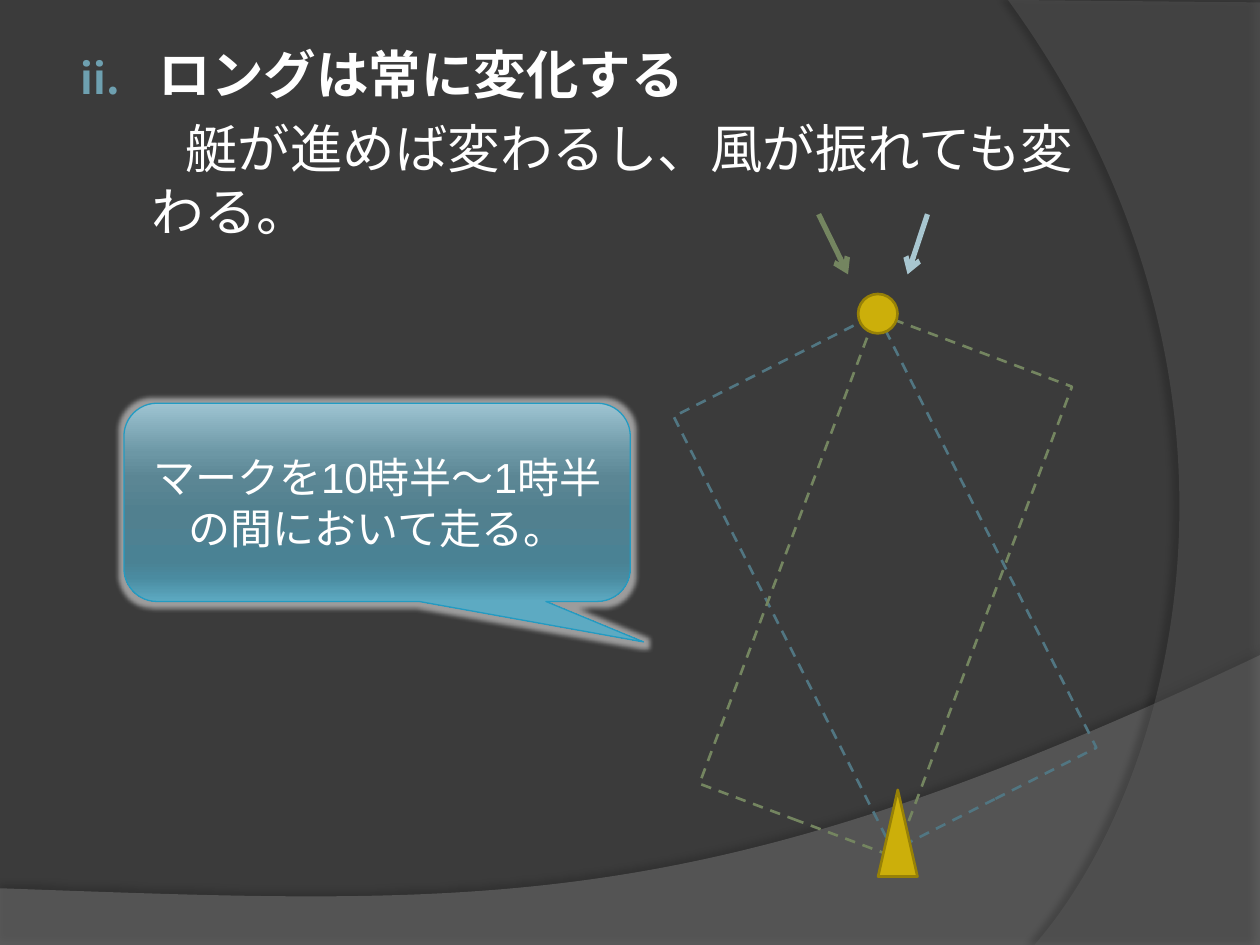
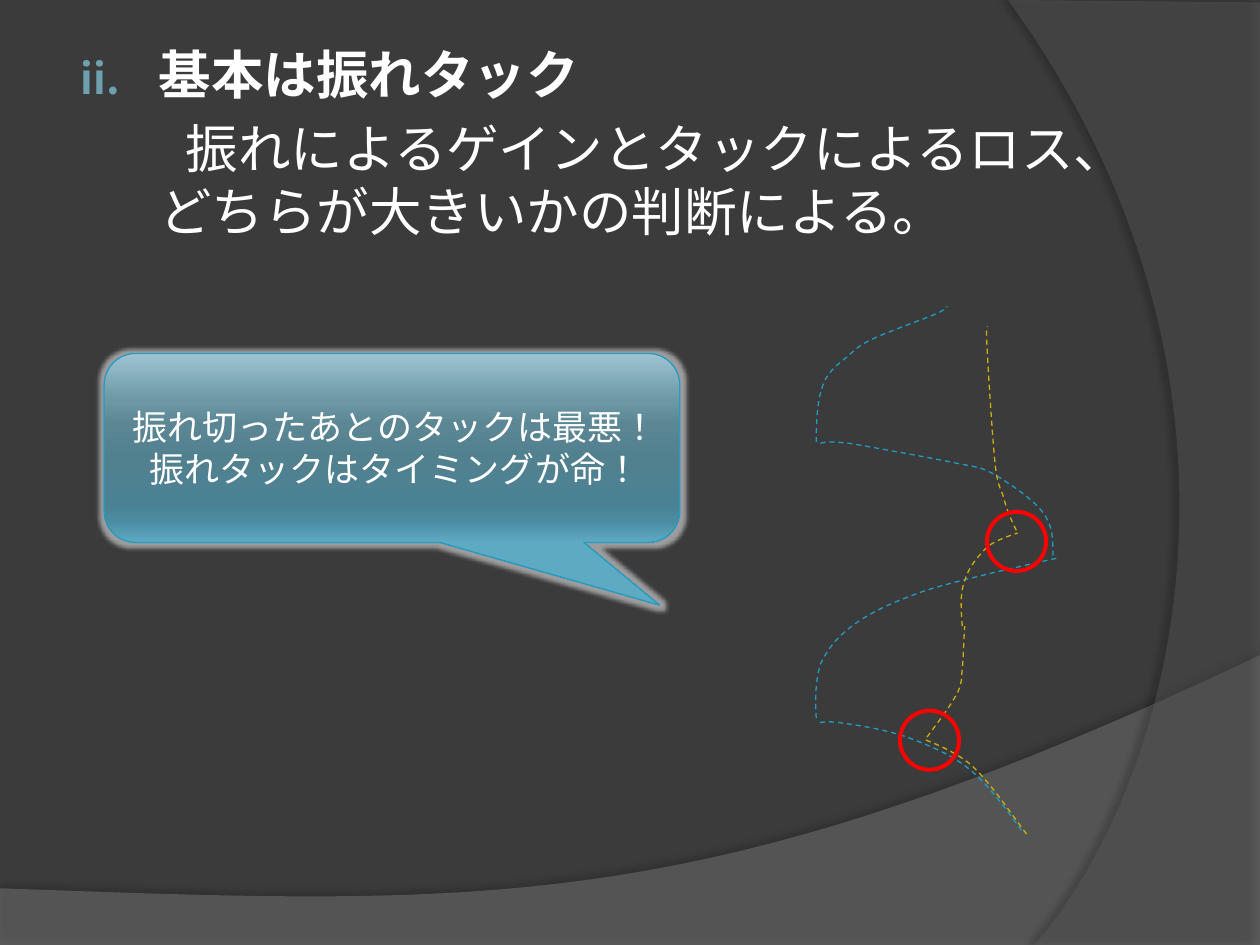
from collections import namedtuple
from dataclasses import dataclass

from lxml.etree import SubElement
from pptx import Presentation
from pptx.dml.color import RGBColor
from pptx.enum.dml import MSO_LINE as Dash
from pptx.enum.lang import MSO_LANGUAGE_ID as Language
from pptx.enum.shapes import MSO_CONNECTOR as Connector, MSO_SHAPE as Shape
from pptx.enum.text import MSO_ANCHOR as Anchor, PP_ALIGN as Align
from pptx.oxml.ns import qn
from pptx.util import Pt

Box = namedtuple("Box", "left top width height")
SLIDE = Box(0, 0, 720, 540)


@dataclass(frozen=True)
class Theme:
    font: str = "Arial"
    background: str = "3B3B3B"
    text: str = "FFFFFF"
    number: str = "6EA0B0"
    shadow: str = "000000"
    lower_band: str = "7F7F7F"
    right_band: str = "5E5E5E"
    mark: str = "CCAF0A"
    mark_edge: str = "978107"
    blue_frame: str = "517682"
    blue_wind: str = "A8C6D0"
    green: str = "748560"
    cyan: str = "239BC2"
    ring: str = "FF0000"
    body_size: int = 30
    gloss: tuple = ((0, "9EC4D2"), (25, "6C97A5"), (38, "5B8694"), (55, "51808F"),
                    (80, "4A8294"), (88, "4A8BA0"), (100, "5DAAC2"))


THEME = Theme()
HANGING = (48, -44.6)

# Each track leg is a start point followed by Bezier triples.
SWINGING_LEGS = [
    [(117.9, 300.5), (108.6, 287.5), (98.5, 273.8), (87.7, 265.2),
     (76.9, 256.6), (63.9, 251.5), (52.4, 247.2),
     (40.2, 242.9), (25.8, 240.7), (16.4, 239.3),
     (7.8, 237.8), (4.2, 238.6), (0.6, 239.3)],
    [(0.6, 236.4), (0, 225.6), (0, 214.1), (3.4, 204.7),
     (7.8, 196.1), (12.8, 189.6), (22.9, 182.4),
     (32.2, 175.9), (43.8, 170.2), (62.5, 163.7),
     (81.9, 157.2), (138.1, 145), (138.1, 145)],
    [(135.9, 143.5), (135.9, 134.9), (135.9, 126.2), (130.2, 119),
     (124.4, 111.1), (111.4, 102.5), (102.8, 97.4),
     (94.2, 92.4), (92, 93.1), (78.3, 90.2),
     (64.6, 87.4), (33, 81.6), (20, 79.4),
     (7.8, 78), (4.9, 78.7), (2.7, 79.4)],
    [(0.6, 78.7), (0.6, 65.8), (1.3, 53.5), (4.9, 44.9),
     (8.5, 36.2), (15.7, 32.6), (20, 28.3),
     (25, 24), (26.5, 22.6), (34.4, 19),
     (42.3, 15.4), (60.3, 8.9), (67.5, 6),
     (74.7, 3.1), (75.4, 1), (75.4, 1)],
]
TACKING_LEGS = [
    [(120.8, 302.6), (110, 288.2), (99.9, 273.1), (89.8, 263.8),
     (80.5, 255.1), (62.5, 248.6), (62.5, 248.6)],
    [(63.9, 247.2), (70.4, 238.6), (76.9, 229.9), (80.5, 223.4),
     (84.1, 217), (83.4, 214.8), (84.1, 208.3),
     (84.8, 201.8), (84.8, 192.5), (85.5, 183.8)],
    [(84.1, 183.8), (83.4, 174.5), (82.6, 165.1), (85.5, 157.9),
     (87.7, 150), (93.4, 143.5), (98.5, 138.5),
     (103.5, 134.2), (115.8, 130.6), (115.8, 130.6)],
    [(115, 129.1), (112.2, 123.4), (109.3, 116.9), (107.8, 110.4),
     (105.7, 103.9), (104.2, 103.9), (102.8, 90.2),
     (101.4, 76.6), (99.2, 42), (98.5, 29),
     (97.8, 16.1), (97.8, 13.9), (98.5, 12.5)],
]


def rgb(color):
    return RGBColor.from_string(color)


def within(box, left, top, width, height):
    return Box(box.left + left, box.top + top, width, height)


def lengths(values):
    return [Pt(value) for value in values]


def add_xml(parent, tag, **attributes):
    return SubElement(parent, qn(tag), {k: str(v) for k, v in attributes.items()})


def add_color(parent, color, opacity=100):
    node = add_xml(parent, "a:srgbClr", val=color)
    if opacity < 100:
        add_xml(node, "a:alpha", val=opacity * 1000)


def style(shape, fill=None, line=None, weight=1.5, dash=None):
    shape.shadow.inherit = False
    if fill:
        shape.fill.solid()
        shape.fill.fore_color.rgb = rgb(fill)
    else:
        shape.fill.background()
    if line:
        shape.line.color.rgb = rgb(line)
        for name, value in {"width": Pt(weight), "dash_style": dash}.items():
            setattr(shape.line, name, value)
    else:
        shape.line.fill.background()
    return shape


def add_effect(shape, tag, color, opacity, **attributes):
    effects = shape._element.spPr.find(qn("a:effectLst"))
    add_color(add_xml(effects, tag, **attributes), color, opacity)


def add_outline(slide, box, curve, corners=(), close=False):
    """Draw straight lines through the corners, then Bezier triples along the curve."""
    def place(points):
        return [lengths((box.left + x, box.top + y)) for x, y in points]

    anchors = place([*corners, *curve[::3]])
    builder = slide.shapes.build_freeform(*anchors[0])
    builder.add_line_segments(anchors[1:], close=close)
    outline = builder.convert_to_shape()
    segments = list(outline._element.iter(qn("a:lnTo")))
    bends = segments[max(len(corners), 0):] if corners else segments
    controls = place(curve[1:])
    for index, straight in enumerate(bends):
        bend = straight.makeelement(qn("a:cubicBezTo"))
        for x, y in controls[3 * index:3 * index + 3]:
            add_xml(bend, "a:pt", x=x - outline.left, y=y - outline.top)
        straight.getparent().replace(straight, bend)
    return outline


def add_preset(slide, kind, box, **look):
    return style(slide.shapes.add_shape(kind, *lengths(box)), **look)


def add_bands(slide, box):
    right, bottom = box.width, box.height
    lower = [(right, 374.4), (402.5, 524.9), (281.5, 517.7), (0, 507.6)]
    side = [(591.1, bottom), (673.2, 445.7), (733, 216), (576, 0)]
    for corners, curve, fill, opacity, shade, distance, angle in (
            ([(0, bottom), (right, bottom)], lower, THEME.lower_band, 45, 35, 3.5, 270),
            ([(right, 1.4), (right, bottom)], side, THEME.right_band, 40, 45, 4, 180)):
        band = style(add_outline(slide, box, curve, corners, close=True), fill)
        color = band._element.spPr.find(qn("a:solidFill"))[0]
        add_xml(color, "a:alpha", val=opacity * 1000)
        add_effect(band, "a:outerShdw", THEME.shadow, shade, blurRad=Pt(4),
                   dist=Pt(distance), dir=angle * 60000, algn="ctr", rotWithShape=0)


def write(paragraph, text, size, bold=False, indent=(0, 0), **layout):
    """Fill a paragraph; indent is the left margin and the first line's shift."""
    properties = paragraph._p.get_or_add_pPr()
    for name, value in zip(("marL", "indent"), indent):
        properties.set(name, str(Pt(value)))
    for name, value in layout.items():
        setattr(paragraph, name, value)
    run = paragraph.add_run()
    run.text = text
    for name, value in {"name": THEME.font, "size": Pt(size), "bold": bold,
                        "language_id": Language.JAPANESE}.items():
        setattr(run.font, name, value)
    run.font.color.rgb = rgb(THEME.text)


def add_point(slide, box, heading, explanation, indent):
    frame = slide.shapes.add_textbox(*lengths(box)).text_frame
    frame.word_wrap = True
    title = frame.paragraphs[0]
    write(title, heading, THEME.body_size, True, HANGING, space_before=Pt(6))
    properties = title._p.pPr
    add_color(add_xml(properties, "a:buClr"), THEME.number)
    add_xml(properties, "a:buSzPct", val=80000)
    add_xml(properties, "a:buAutoNum", type="romanLcPeriod", startAt=2)
    write(frame.add_paragraph(), explanation, THEME.body_size,
          indent=indent, space_before=Pt(6.4))


def add_callout(slide, box, lines, size, tail, indent=(0, 0)):
    callout = add_preset(slide, Shape.ROUNDED_RECTANGULAR_CALLOUT, box,
                         line=THEME.cyan, weight=0.75)
    for index, value in enumerate((*tail, 0.167)):
        callout.adjustments[index] = value
    callout.fill.gradient()
    callout.fill.gradient_angle = 270
    stops = callout._element.spPr.find(qn("a:gradFill")).find(qn("a:gsLst"))
    for stop in list(stops):
        stops.remove(stop)
    for position, color in THEME.gloss:
        add_color(add_xml(stops, "a:gs", pos=position * 1000), color)
    add_effect(callout, "a:glow", THEME.text, 50, rad=Pt(5.5))
    frame = callout.text_frame
    for name, value in {"word_wrap": True, "vertical_anchor": Anchor.MIDDLE}.items():
        setattr(frame, name, value)
    for index, text in enumerate(lines):
        paragraph = frame.add_paragraph() if index else frame.paragraphs[0]
        write(paragraph, text, size, indent=indent, alignment=Align.CENTER)


def add_wind(slide, box, start, end, color):
    ends = [value for x, y in (start, end) for value in (box.left + x, box.top + y)]
    wind = slide.shapes.add_connector(Connector.STRAIGHT, *lengths(ends))
    wind.line.color.rgb = rgb(color)
    wind.line.width = Pt(3)
    add_xml(wind.line._get_or_add_ln(), "a:tailEnd", type="arrow")
    add_xml(wind._element.spPr, "a:effectLst")


def add_course(slide, box):
    """Draw the mark, the boat and the laylines for two wind directions."""
    for frame, angle, color, start, end, wind in (
            ((0.6, 73.7, 130.3, 277.9), 333.2, THEME.blue_frame,
             (90, 2.4), (78.6, 36.8), THEME.blue_wind),
            ((6.4, 70.8, 119.5, 287.3), 20.6, THEME.green,
             (27.8, 2.4), (44.6, 36.8), THEME.green)):
        laylines = add_preset(slide, Shape.RECTANGLE, within(box, *frame),
                              line=color, dash=Dash.DASH)
        laylines.rotation = angle
        add_wind(slide, box, start, end, wind)
    for kind, left, top, height in ((Shape.OVAL, 50.4, 48, 22.5),
                                    (Shape.ISOSCELES_TRIANGLE, 61.8, 331.4, 49.5)):
        add_preset(slide, kind, within(box, left, top, 22.5, height),
                   fill=THEME.mark, line=THEME.mark_edge)


def add_tracks(slide, box):
    """Draw two boats' tracks and ring the well-timed tacks."""
    for legs, color in ((SWINGING_LEGS, THEME.cyan), (TACKING_LEGS, THEME.mark)):
        for leg in legs:
            style(add_outline(slide, box, leg),
                  line=color, weight=0.75, dash=Dash.DASH)
    for left, top in ((48.5, 232.1), (98.2, 118.5)):
        add_preset(slide, Shape.OVAL, within(box, left, top, 33.8, 33.8),
                   line=THEME.ring, weight=2.25)


def add_slide(deck, heading, explanation, indent):
    slide = deck.slides.add_slide(deck.slide_layouts[6])
    slide.background.fill.solid()
    slide.background.fill.fore_color.rgb = rgb(THEME.background)
    add_bands(slide, SLIDE)
    add_point(slide, Box(35.8, 20.5, 588.2, 461.5), heading, explanation, indent)
    return slide


def main():
    deck = Presentation()
    deck.slide_width, deck.slide_height = lengths(SLIDE[2:])

    long_leg = add_slide(deck, "ロングは常に変化する",
                         "艇が進めば変わるし、風が振れても変わる。", (44, 19.1))
    add_course(long_leg, Box(440, 120, 140, 390))
    add_callout(long_leg, Box(70.8, 230.4, 289.4, 113.3),
                ["マークを10時半〜1時半の間において走る。"], 24, (0.526, 0.704))

    shift_tack = add_slide(deck, "基本は振れタック",
                           "振れによるゲインとタックによるロス、どちらが大きいかの判断による。",
                           (48.2, 15.2))
    add_callout(shift_tack, Box(59.5, 202, 329, 108),
                ["振れ切ったあとのタックは最悪！", "振れタックはタイミングが命！"],
                20, (0.465, 0.832), HANGING)
    add_tracks(shift_tack, Box(465.8, 174, 140, 304))

    deck.save("out.pptx")


if __name__ == "__main__":
    main()
